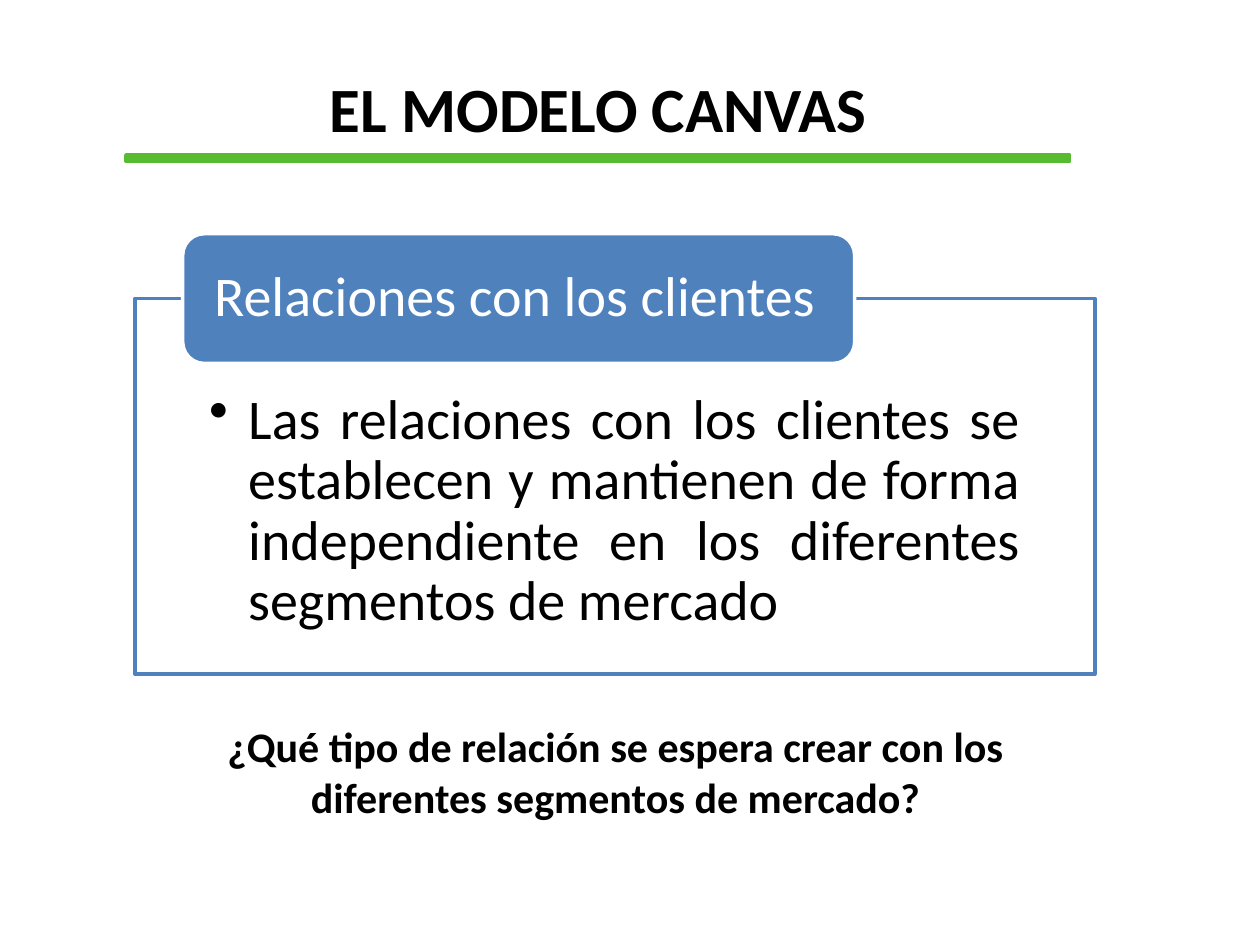
import pptx
import pptx.util
import pptx.dml.color
import pptx.enum.shapes
import pptx.enum.text
import lxml.etree

Inches = pptx.util.Inches
Pt = pptx.util.Pt
Kind = pptx.enum.shapes.MSO_SHAPE
Align = pptx.enum.text.PP_ALIGN
Anchor = pptx.enum.text.MSO_ANCHOR

BLUE, GREEN, WHITE, BLACK = "4F81BD", "57BC32", "FFFFFF", "000000"


def color(code):
    return pptx.dml.color.RGBColor.from_string(code)


def add_box(slide, kind, box, fill, line):
    shape = slide.shapes.add_shape(kind, *map(Inches, box))
    shape.shadow.inherit = False
    shape.fill.solid()
    shape.fill.fore_color.rgb = color(fill)
    shape.line.color.rgb = color(line)
    shape.line.width = Pt(2)
    return shape


def set_text(shape, text, size, ink=BLACK, bold=False, align=Align.CENTER,
             anchor=Anchor.TOP, insets=(0.1, 0.05, 0.1, 0.05)):
    frame = shape.text_frame
    frame.word_wrap = True
    frame.vertical_anchor = anchor
    (frame.margin_left, frame.margin_top,
     frame.margin_right, frame.margin_bottom) = map(Inches, insets)
    para = frame.paragraphs[0]
    para.text = text
    para.alignment = align
    para.font.name = "Calibri"
    para.font.size = Pt(size)
    para.font.bold = bold
    para.font.color.rgb = color(ink)
    return para


def add_bullet(para, indent):
    props = para._p.get_or_add_pPr()
    props.set("marL", str(Inches(indent)))
    props.set("indent", str(-Inches(indent)))
    mark = lxml.etree.Element(pptx.oxml.ns.qn("a:buChar"), char="•")
    # The bullet goes before the default run properties
    props.find(pptx.oxml.ns.qn("a:defRPr")).addprevious(mark)


def add_title(slide, box, text):
    left, top, width, height = box
    # Green rule under the title
    add_box(slide, Kind.RECTANGLE, (left, top + 0.73, width, 0.05), GREEN, GREEN)
    label = slide.shapes.add_textbox(
        Inches(2.25), Inches(top), Inches(5), Inches(height))
    set_text(label, text, 36, bold=True)


def add_panel(slide, box, head, body):
    left, top, width, height = box
    # Framed body with one bullet
    frame = add_box(slide, Kind.RECTANGLE, box, WHITE, BLUE)
    para = set_text(frame, body, 32, align=Align.JUSTIFY,
                    insets=(0.59, 0.73, 0.59, 0.25))
    para.line_spacing = 0.9
    add_bullet(para, 0.31)
    # Heading tab, centred on the top edge
    tall = 1.03
    tab = add_box(slide, Kind.ROUNDED_RECTANGLE,
                  (left + 0.38, top - tall / 2, width * 0.7, tall), BLUE, WHITE)
    para = set_text(tab, head, 32, WHITE, align=Align.LEFT,
                    anchor=Anchor.MIDDLE, insets=(0.2, 0, 0.2, 0))
    para.line_spacing = 0.9


def add_question(slide, box, text):
    label = slide.shapes.add_textbox(*map(Inches, box))
    set_text(label, text, 24, bold=True)


def main():
    deck = pptx.Presentation()
    deck.slide_width, deck.slide_height = Inches(10), Inches(7.5)
    slide = deck.slides.add_slide(deck.slide_layouts[6])
    add_title(slide, (1, 0.5, 7.49, 0.71), "EL MODELO CANVAS")
    add_panel(slide, (1.07, 2.37, 7.62, 2.98), "Relaciones con los clientes",
              "Las relaciones con los clientes se establecen y mantienen de "
              "forma independiente en los diferentes segmentos de mercado")
    add_question(slide, (1.08, 5.67, 7.61, 0.91),
                 "¿Qué tipo de relación se espera crear con los diferentes "
                 "segmentos de mercado?")
    deck.save("out.pptx")


if __name__ == "__main__":
    main()
